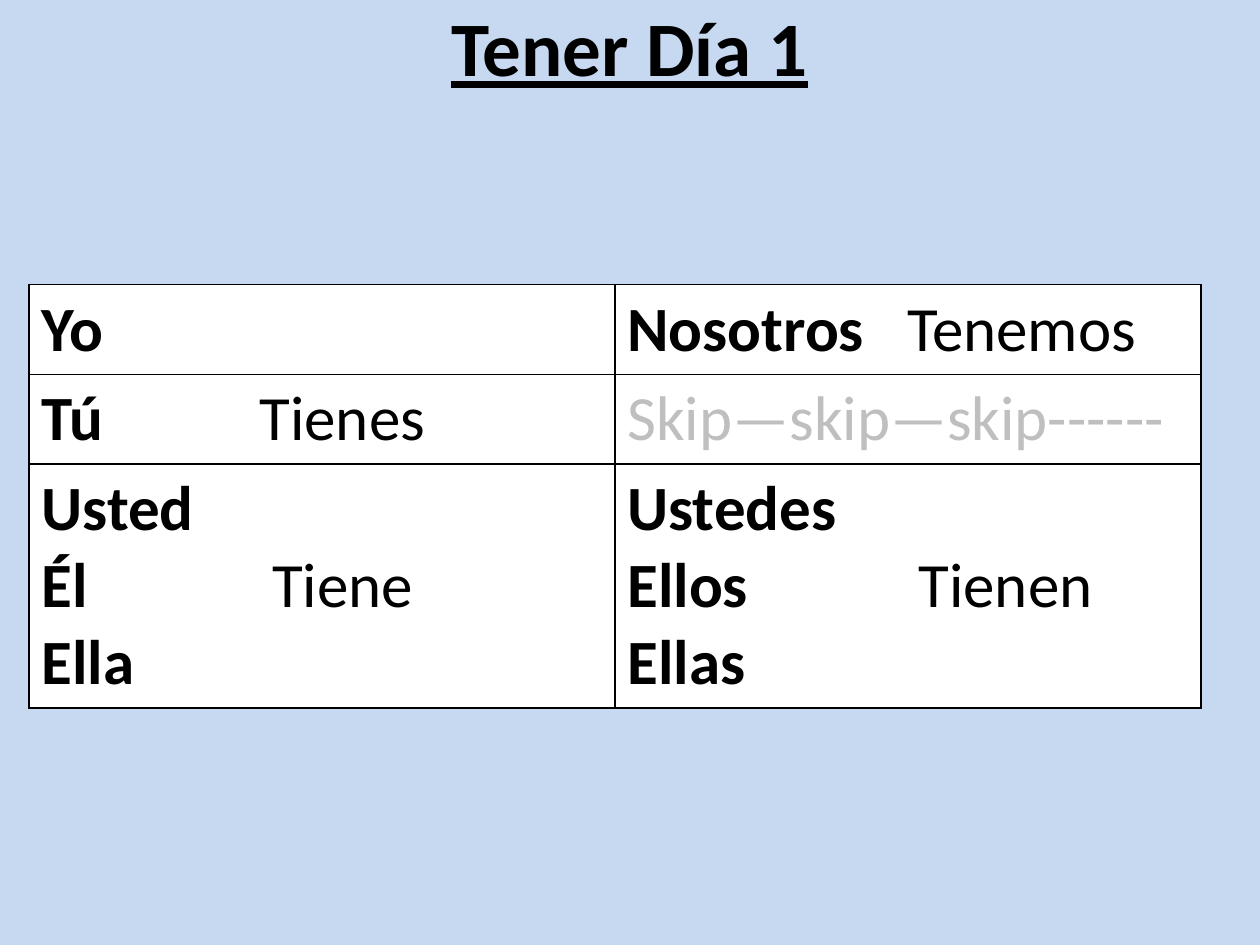
from dataclasses import dataclass

import pptx
import pptx.dml.color
import pptx.enum.text
import pptx.oxml
import pptx.oxml.ns
import pptx.util

Inches = pptx.util.Inches
Pt = pptx.util.Pt
RGBColor = pptx.dml.color.RGBColor


@dataclass(frozen=True)
class Theme:
    font: str = "Calibri"
    title_size: int = 44
    cell_size: int = 36
    background: str = "C6D9F1"
    ink: str = "000000"
    muted: str = "BFBFBF"
    paper: str = "FFFFFF"
    border_width: int = 1


@dataclass(frozen=True)
class Line:
    """A pronoun, then its verb form at a tab stop in inches."""
    pronoun: str
    verb: str = ""
    tab: float = 0
    color: str = Theme.ink
    bold: bool = True


THEME = Theme()
TITLE_ONLY_LAYOUT = 5
SLIDE_WIDTH, SLIDE_HEIGHT = Inches(10), Inches(7.5)
TABLE_LEFT, TABLE_TOP, COLUMN_WIDTH = Inches(0.23), Inches(2.26), Inches(4.65)
ROW_HEIGHTS = [Inches(0.7), Inches(0.7), Inches(1.9)]

CONJUGATION = [
    [[Line("Yo")],
     [Line("Nosotros", "Tenemos", 2.22)]],
    [[Line("Tú", "Tienes", 1.73)],
     [Line("Skip—skip—skip------", color=THEME.muted, bold=False)]],
    [[Line("Usted"), Line("Él", "Tiene", 1.83), Line("Ella")],
     [Line("Ustedes"), Line("Ellos", "Tienen", 2.31), Line("Ellas")]],
]


def add_text(paragraph, text: str, *, size: int, color: str = THEME.ink,
             bold: bool = False, underline: bool = False) -> None:
    run = paragraph.add_run()
    run.text = text
    run.font.name = THEME.font
    run.font.size = Pt(size)
    run.font.bold = bold
    run.font.underline = underline
    run.font.color.rgb = RGBColor.from_string(color)


def add_tab_stop(paragraph, position: float) -> None:
    properties = paragraph._p.get_or_add_pPr()
    properties.append(pptx.oxml.parse_xml(
        f'<a:tabLst {pptx.oxml.ns.nsdecls("a")}>'
        f'<a:tab pos="{Inches(position)}" algn="l"/></a:tabLst>'))


def set_borders(cell) -> None:
    properties = cell._tc.get_or_add_tcPr()
    for index, side in enumerate(("lnL", "lnR", "lnT", "lnB")):
        properties.insert(index, pptx.oxml.parse_xml(
            f'<a:{side} {pptx.oxml.ns.nsdecls("a")} w="{Pt(THEME.border_width)}">'
            f'<a:solidFill><a:srgbClr val="{THEME.ink}"/></a:solidFill></a:{side}>'))


def fill_cell(cell, lines: list[Line]) -> None:
    cell.fill.solid()
    cell.fill.fore_color.rgb = RGBColor.from_string(THEME.paper)
    set_borders(cell)
    frame = cell.text_frame
    for index, line in enumerate(lines):
        paragraph = frame.add_paragraph() if index else frame.paragraphs[0]
        add_text(paragraph, line.pronoun, size=THEME.cell_size,
                 color=line.color, bold=line.bold)
        if line.verb:
            add_tab_stop(paragraph, line.tab)
            add_text(paragraph, "\t" + line.verb, size=THEME.cell_size)


def format_title(title) -> None:
    title.left, title.top = 0, Inches(-0.31)
    title.width, title.height = SLIDE_WIDTH, Inches(1.35)
    title.text_frame.vertical_anchor = pptx.enum.text.MSO_ANCHOR.MIDDLE
    paragraph = title.text_frame.paragraphs[0]
    paragraph.alignment = pptx.enum.text.PP_ALIGN.CENTER
    add_text(paragraph, "Tener Día 1", size=THEME.title_size,
             bold=True, underline=True)


def add_conjugation_table(slide) -> None:
    columns = len(CONJUGATION[0])
    table = slide.shapes.add_table(
        len(CONJUGATION), columns, TABLE_LEFT, TABLE_TOP,
        COLUMN_WIDTH * columns, sum(ROW_HEIGHTS)).table
    table.first_row = table.horz_banding = False
    for column in table.columns:
        column.width = COLUMN_WIDTH
    for row_index, row in enumerate(CONJUGATION):
        table.rows[row_index].height = ROW_HEIGHTS[row_index]
        for column_index, lines in enumerate(row):
            fill_cell(table.cell(row_index, column_index), lines)


def main() -> None:
    presentation = pptx.Presentation()
    presentation.slide_width, presentation.slide_height = SLIDE_WIDTH, SLIDE_HEIGHT
    slide = presentation.slides.add_slide(
        presentation.slide_layouts[TITLE_ONLY_LAYOUT])
    slide.background.fill.solid()
    slide.background.fill.fore_color.rgb = RGBColor.from_string(THEME.background)
    format_title(slide.shapes.title)
    add_conjugation_table(slide)
    presentation.save("out.pptx")


if __name__ == "__main__":
    main()
